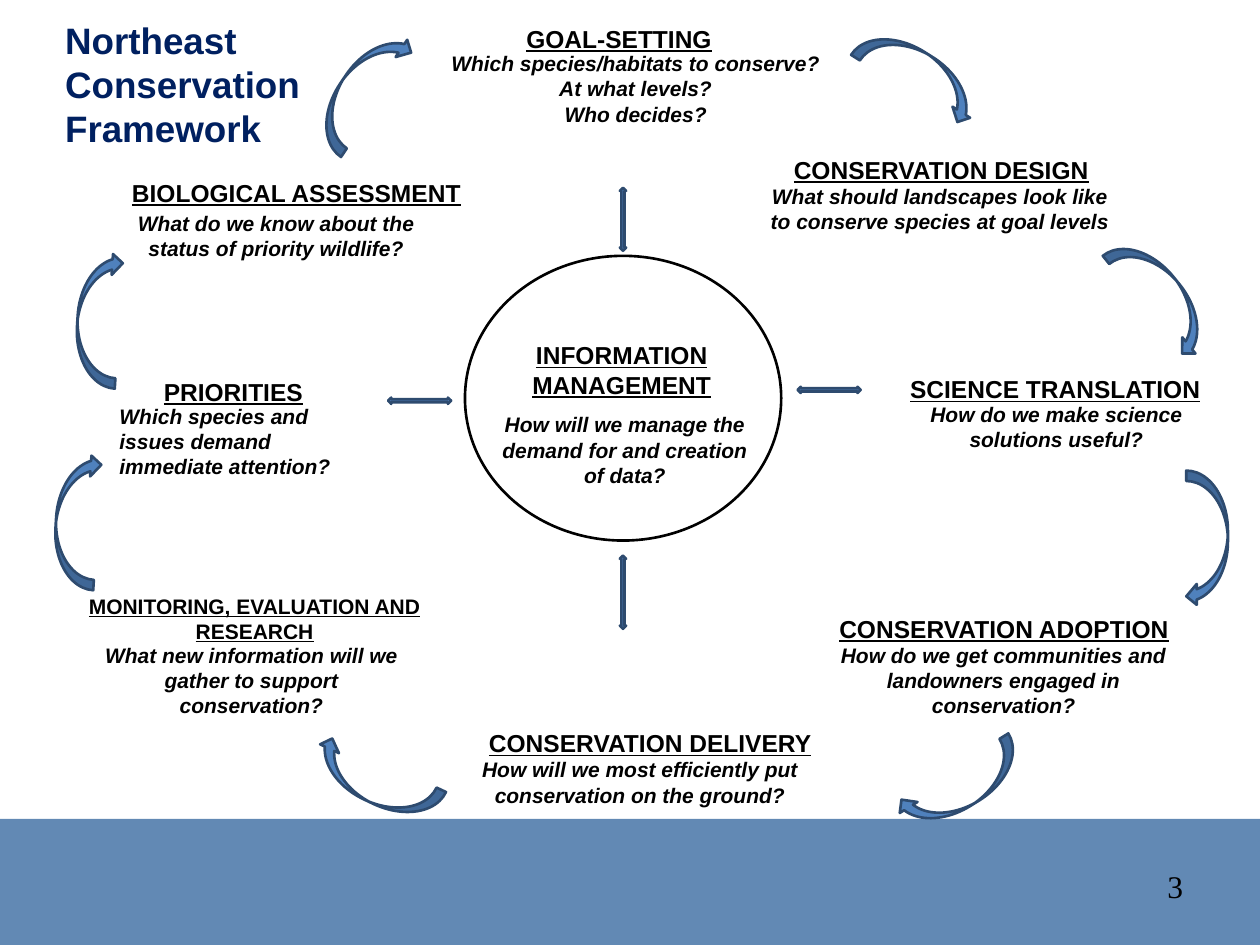
from pptx import Presentation
from pptx.util import Pt
from pptx.dml.color import RGBColor as RGB
from pptx.enum.shapes import MSO_SHAPE as SHAPE
from pptx.enum.text import PP_ALIGN as AL, MSO_ANCHOR as ANCHOR, MSO_AUTO_SIZE as AUTO

BLACK = RGB(0, 0, 0)
NAVY = RGB(0x00, 0x20, 0x60)
BAND = RGB(0x62, 0x89, 0xB4)
BLUE = RGB(0x4F, 0x81, 0xBD)
EDGE = RGB(0x2E, 0x4B, 0x6F)
LEFT, MID = AL.LEFT, AL.CENTER

deck = Presentation()
deck.slide_width, deck.slide_height = Pt(720), Pt(540)
slide = deck.slides.add_slide(deck.slide_layouts[5])
shapes = slide.shapes


def write(text, box, shape=None, size=12, font="Arial", color=BLACK, bold=True,
          italic=False, under=False, align=MID, pad=(7.2, 3.6)):
    area = [Pt(n) for n in box]
    shape = shape or shapes.add_textbox(*area)
    shape.left, shape.top, shape.width, shape.height = area
    frame = shape.text_frame
    frame.word_wrap = True
    frame.auto_size = AUTO.NONE
    frame.vertical_anchor = ANCHOR.TOP
    frame.margin_left = frame.margin_right = Pt(pad[0])
    frame.margin_top = frame.margin_bottom = Pt(pad[1])
    frame.text = text
    for para in frame.paragraphs:
        para.alignment = align
        para.space_before = Pt(0)
        for run in para.runs:
            face = run.font
            face.name, face.size, face.bold = font, Pt(size), bold
            face.italic, face.underline = italic, under
            face.color.rgb = color


def draw(kind, box, fill=None, line=None, turn=0):
    shape = shapes.add_shape(kind, *[Pt(n) for n in box])
    shape.shadow.inherit = False
    shape.rotation = turn
    if fill is None:
        shape.fill.background()
    else:
        shape.fill.solid()
        shape.fill.fore_color.rgb = fill
    if line is None:
        shape.line.fill.background()
    else:
        shape.line.color.rgb = line
        shape.line.width = Pt(1.5)


draw(SHAPE.RECTANGLE, (0, 468, 720, 72), fill=BAND)
draw(SHAPE.OVAL, (265.7, 146.2, 180.7, 162.7), line=BLACK)

write("Northeast\nConservation Framework", (30, 6.5, 189.5, 83.5),
      shape=shapes.title, size=21, color=NAVY, align=LEFT)

heads = [
    ("GOAL-SETTING", (285, 8.6, 137.5, 27), MID),
    ("BIOLOGICAL ASSESSMENT", (66, 96.5, 243, 27), LEFT),
    ("SCIENCE TRANSLATION", (504.7, 208.8, 196.6, 27), MID),
    ("CONSERVATION ADOPTION", (470.2, 345.6, 213.8, 27), LEFT),
    ("INFORMATION MANAGEMENT", (253.4, 189.4, 203.8, 44), MID),
    ("CONSERVATION DESIGN", (444.2, 83.5, 193, 27), LEFT),
    ("CONSERVATION DELIVERY", (270, 411, 216, 27), LEFT),
    ("PRIORITIES", (84.2, 210.2, 203.8, 27), LEFT),
]
for text, box, align in heads:
    write(text, box, size=14, under=True, align=align, pad=(9.4, 5))
write("MONITORING, EVALUATION AND RESEARCH", (23.8, 335.5, 243.4, 36), under=True)

asks = [
    ("Which species/habitats to conserve? At what levels?\nWho decides?",
     (247, 25.4, 232.5, 62), MID),
    ("What do we know about the status of priority wildlife?",
     (66, 116.6, 183.6, 36), MID),
    ("How do we make science solutions useful?", (514, 226, 179.3, 36), MID),
    ("How do we get communities and landowners engaged in conservation?",
     (463, 363.6, 221, 51), MID),
    ("How will we manage the demand for and creation of data?",
     (274.3, 231.8, 165.6, 51), MID),
    ("What should landscapes look like to conserve species at goal levels",
     (432, 101.5, 210.2, 36), MID),
    ("How will we most efficiently put conservation on the ground?",
     (263.5, 429, 204.5, 94), MID),
    ("What new information will we gather to support conservation?",
     (49, 363.6, 189.4, 51), MID),
    ("Which species and issues demand immediate attention?",
     (61.2, 226.8, 162.7, 51), LEFT),
]
for text, box, align in asks:
    write(text, box, italic=True, align=align)

curves = [
    (5, 285.8, 273.7), (17.3, 170.6, 273.7), (167.8, 38.9, 303.9),
    (486.7, 30.2, 32.3), (625, 157, 50.9), (650.9, 295.9, 90),
    (510.5, 437.8, 148.2), (175.7, 434.9, 205.2),
]
for x, y, turn in curves:
    draw(SHAPE.CURVED_DOWN_ARROW, (x, y, 77.8, 23.8), BLUE, EDGE, turn)

for y, tall in ((107.3, 36), (317.5, 41.8)):
    draw(SHAPE.UP_DOWN_ARROW, (354.2, y, 3.6, tall), BLUE, EDGE)
for x, y in ((455.8, 221), (221.8, 227.2)):
    draw(SHAPE.LEFT_RIGHT_ARROW, (x, y, 36, 3.6), BLUE, EDGE)

write("3", (660, 492, 42, 29), size=18, font="Times New Roman", bold=False, align=LEFT)

deck.save("out.pptx")
